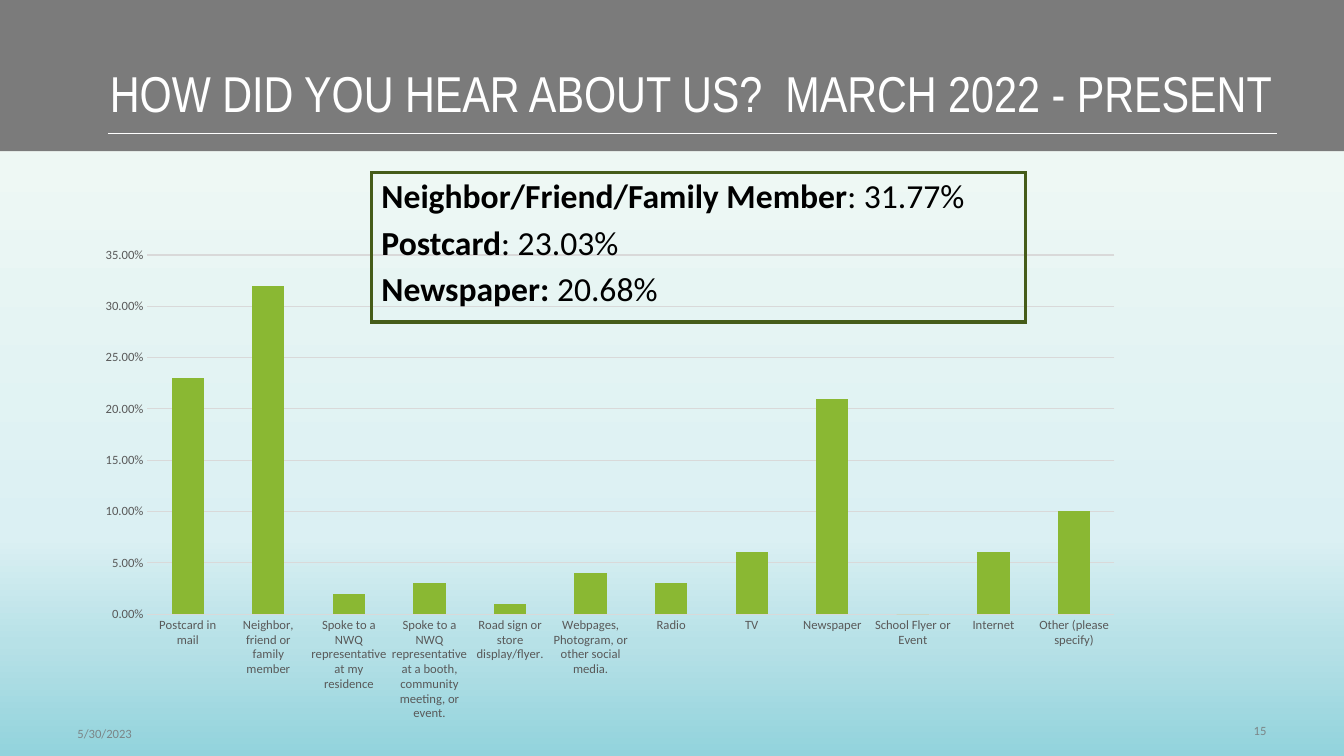
from lxml import etree
from pptx import Presentation
from pptx.chart.data import CategoryChartData
from pptx.dml.color import RGBColor
from pptx.enum.chart import XL_CHART_TYPE as CT, XL_TICK_MARK as TM
from pptx.enum.shapes import MSO_CONNECTOR as CN, MSO_SHAPE as SH
from pptx.enum.text import MSO_ANCHOR as VA, PP_ALIGN as AL
from pptx.oxml.ns import qn
from pptx.util import Inches, Pt


def rgb(value):
    return RGBColor.from_string(value)


def write(p, text, size=24, color="000000", font="Calibri", bold=False, align=AL.LEFT, spacing=0.95, after=0):
    p.alignment, p.line_spacing, p.space_after = align, spacing, Pt(after)
    r = p.add_run()
    r.text = text
    r.font.size, r.font.name, r.font.bold = Pt(size), font, bold
    r.font.color.rgb = rgb(color)


prs = Presentation()
prs.slide_width, prs.slide_height = Inches(13.33), Inches(7.5)
W, H = prs.slide_width, prs.slide_height
col, row = W // 1333, H // 750
s = prs.slides.add_slide(prs.slide_layouts[5])

bg = s.background.fill
bg.gradient()
bg.gradient_angle = 270
stops = s.element.find(".//" + qn("a:gsLst"))
for old in list(stops):
    stops.remove(old)
for share, color in [(0, "F6FBF4"), (71, "DBF0F3"), (85, "B7E1E7"), (100, "92D3DC")]:
    gs = etree.SubElement(stops, qn("a:gs"), pos=str(share * 1000))
    etree.SubElement(gs, qn("a:srgbClr"), val=color)

band = s.shapes.add_shape(SH.RECTANGLE, 0, 0, W, H // 5)
band.shadow.inherit = False
band.fill.solid()
band.fill.fore_color.rgb = rgb("7B7B7B")
band.line.fill.background()

rule = s.shapes.add_connector(CN.STRAIGHT, 107 * col, 132 * row, 1267 * col, 132 * row)
rule.line.color.rgb = rgb("FFFFFF")
rule.line.width = Pt(0.75)
etree.SubElement(rule.element.spPr, qn("a:effectLst"))

title = s.shapes.title
title.left, title.top, title.width, title.height = 99 * col, 58 * row, 1189 * col, 73 * row
s.shapes._spTree.append(title.element)
tf = title.text_frame
tf.word_wrap, tf.vertical_anchor = True, VA.MIDDLE
write(tf.paragraphs[0], "HOW DID YOU HEAR ABOUT US?  MARCH 2022 - PRESENT",
      size=36, color="FFFFFF", font="Arial Narrow")

answers = [
    ("Postcard in mail", 0.23),
    ("Neighbor, friend or family member", 0.32),
    ("Spoke to a NWQ representative at my residence", 0.02),
    ("Spoke to a NWQ representative at a booth, community meeting, or event.", 0.03),
    ("Road sign or store display/flyer.", 0.01),
    ("Webpages, Photogram, or other social media.", 0.04),
    ("Radio", 0.03),
    ("TV", 0.06),
    ("Newspaper", 0.21),
    ("School Flyer or Event", 0),
    ("Internet", 0.06),
    ("Other (please specify)", 0.1),
]
data = CategoryChartData(number_format="0.00%")
data.categories = [name for name, _ in answers]
data.add_series("Series 1", [share for _, share in answers])
chart = s.shapes.add_chart(CT.COLUMN_CLUSTERED, 84 * col, 236 * row, 1042 * col, 489 * row, data).chart
chart.has_legend = chart.has_title = False
chart.font.size, chart.font.name = Pt(10), "Calibri"
chart.font.color.rgb = rgb("000000")
plot = chart.plots[0]
plot.gap_width, plot.vary_by_categories = 150, False
bars = plot.series[0].format.fill
bars.solid()
bars.fore_color.rgb = rgb("8AB833")
for axis in (chart.category_axis, chart.value_axis):
    axis.major_tick_mark = axis.minor_tick_mark = TM.NONE
    axis.format.line.fill.background()
    font = axis.tick_labels.font
    font.size, font.name = Pt(9), "Calibri"
    font.color.rgb = rgb("595959")
values = chart.value_axis
values.minimum_scale, values.maximum_scale, values.major_unit = 0, 0.35, 0.05
values.tick_labels.number_format = "0.00%"
values.tick_labels.number_format_is_linked = False
grid = values.major_gridlines.format.line
grid.color.rgb = rgb("D9D9D9")
grid.width = Pt(0.75)

callout = s.shapes.add_shape(SH.RECTANGLE, 368.5 * col, 171.5 * row, 649 * col, 148 * row)
callout.shadow.inherit = False
callout.fill.background()
callout.line.color.rgb = rgb("455C19")
callout.line.width = Pt(2.25)
etree.SubElement(callout.element.spPr.find(qn("a:ln")), qn("a:miter"), lim="800000")
tf = callout.text_frame
tf.word_wrap, tf.vertical_anchor = True, VA.TOP
top_answers = [("Neighbor/Friend/Family Member", ": 31.77%"), ("Postcard", ": 23.03%"), ("Newspaper: ", "20.68%")]
for i, (label, share) in enumerate(top_answers):
    p = tf.add_paragraph() if i else tf.paragraphs[0]
    write(p, label, bold=True, after=6)
    write(p, share, after=6)

for text, left, top, align in [("5/30/2023", 67, 713, AL.LEFT), ("15", 1066, 710, AL.RIGHT)]:
    tf = s.shapes.add_textbox(left * col, top * row, 200 * col, 30 * row).text_frame
    tf.word_wrap, tf.vertical_anchor = True, VA.MIDDLE
    write(tf.paragraphs[0], text, size=9, color="7B8587", align=align, spacing=1)

prs.save("out.pptx")
